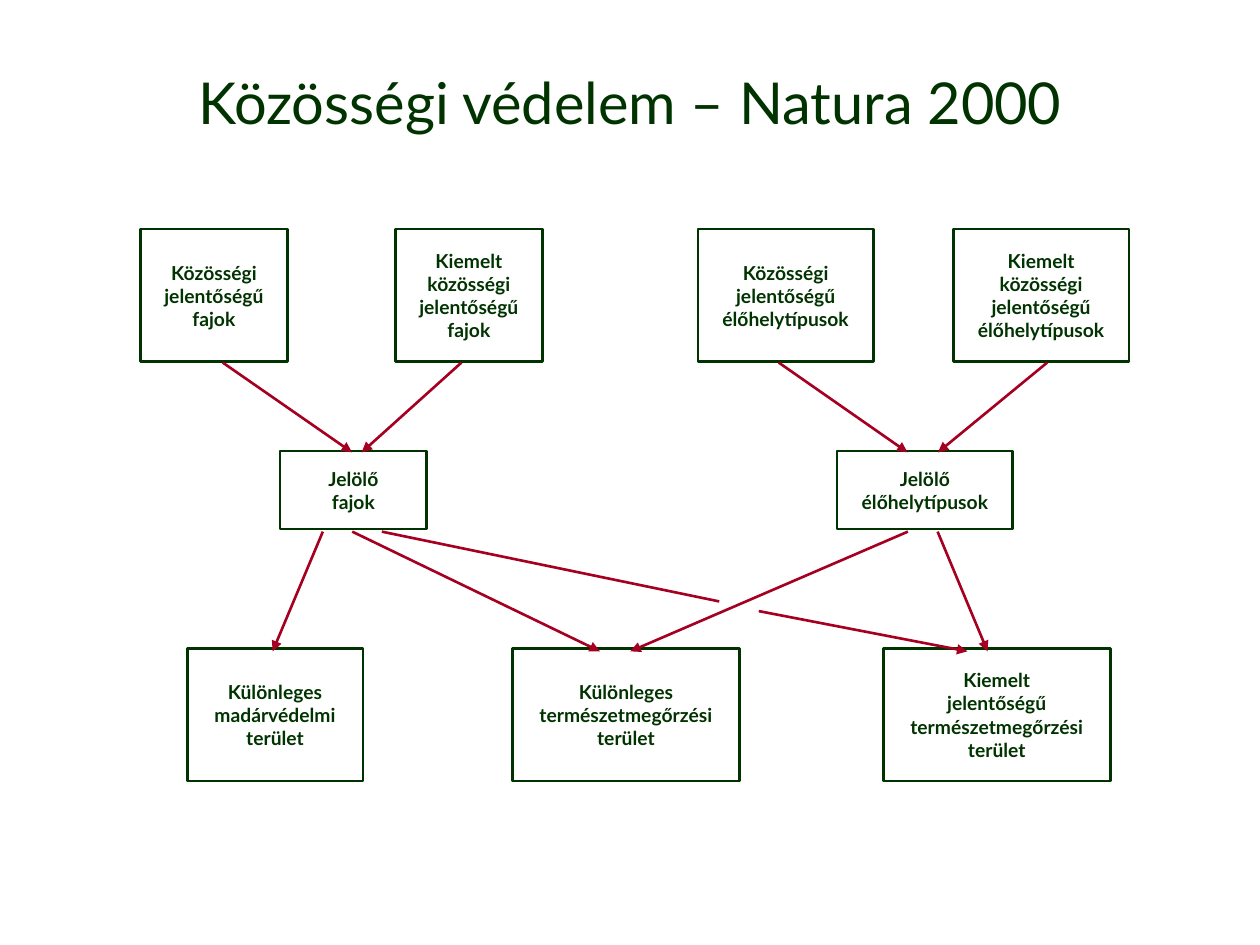
from lxml.etree import SubElement
from pptx import Presentation
from pptx.dml.color import RGBColor
from pptx.enum.shapes import MSO_CONNECTOR, MSO_SHAPE
from pptx.enum.text import MSO_ANCHOR, PP_ALIGN
from pptx.oxml.ns import qn
from pptx.util import Pt

GREEN, RED, WHITE = "003300", "A50021", "FFFFFF"


def color(value):
    return RGBColor.from_string(value)


class Diagram:
    font = "Lato"
    line_width = 1.5

    def __init__(self, slide):
        self.s = slide

    def add_text(self, sp, lines, **fmt):
        tf = sp.text_frame
        tf.word_wrap = True
        tf.vertical_anchor = MSO_ANCHOR.MIDDLE
        for i, line in enumerate(lines):
            p = tf.paragraphs[0] if i == 0 else tf.add_paragraph()
            p.alignment = PP_ALIGN.CENTER
            r = p.add_run()
            r.text = line
            for name, value in {"name": self.font, **fmt}.items():
                setattr(r.font, name, value)
            r.font.color.rgb = color(GREEN)

    def title(self, text, x, y, w, h):
        sp = self.s.shapes.add_textbox(Pt(x), Pt(y), Pt(w), Pt(h))
        self.add_text(sp, [text], size=Pt(33))

    def box(self, center, y, w, h, lines):
        sp = self.s.shapes.add_shape(
            MSO_SHAPE.RECTANGLE, Pt(center - w / 2), Pt(y), Pt(w), Pt(h))
        sp.shadow.inherit = False
        sp.fill.solid()
        sp.fill.fore_color.rgb = color(WHITE)
        sp.line.color.rgb = color(GREEN)
        sp.line.width = Pt(self.line_width)
        self.add_text(sp, lines, size=Pt(11), bold=True)

    def line(self, x1, y1, x2, y2, arrow=True):
        c = self.s.shapes.add_connector(
            MSO_CONNECTOR.STRAIGHT, Pt(x1), Pt(y1), Pt(x2), Pt(y2))
        c.line.color.rgb = color(RED)
        c.line.width = Pt(self.line_width)
        props = c.element.spPr
        if arrow:
            SubElement(props.find(qn("a:ln")), qn("a:tailEnd"), type="triangle")
        SubElement(props, qn("a:effectLst"))


def main():
    prs = Presentation()
    prs.slide_width, prs.slide_height = Pt(720), Pt(540)
    d = Diagram(prs.slides.add_slide(prs.slide_layouts[6]))

    d.title("Közösségi védelem – Natura 2000", 36, 21.6, 648, 72.7)

    # Rows of boxes: top, height, then center, width and lines of each box
    narrow, medium, wide = 83.8, 100.4, 129.8
    rows = [
        (131, 75.8, [
            (122.3, narrow, ["Közösségi jelentőségű", "fajok"]),
            (268, narrow, ["Kiemelt", "közösségi jelentőségű", "fajok"]),
            (449, medium, ["Közösségi jelentőségű", "élőhelytípusok"]),
            (595, medium, ["Kiemelt", "közösségi jelentőségű", "élőhelytípusok"]),
        ]),
        (257.8, 44.6, [
            (202, narrow, ["Jelölő", "fajok"]),
            (528.6, medium, ["Jelölő", "élőhelytípusok"]),
        ]),
        (370.6, 75.8, [
            (157.2, medium, ["Különleges madárvédelmi terület"]),
            (357.7, wide, ["Különleges természetmegőrzési", "terület"]),
            (569.6, wide, ["Kiemelt", "jelentőségű természetmegőrzési terület"]),
        ]),
    ]
    for y, h, boxes in rows:
        for center, w, lines in boxes:
            d.box(center, y, w, h, lines)

    # Arrows between rows: start and end heights, then x pairs
    links = [
        (207.2, 258.5, [(127.3, 201.2), (263.7, 206.7), (445, 518.6), (598.4, 536)]),
        (303.8, 372.2, [(184.5, 155.8), (201.3, 342.8), (518.8, 360.2), (535.8, 564.3)]),
    ]
    for y1, y2, pairs in links:
        for x1, x2 in pairs:
            d.line(x1, y1, x2, y2)

    # Long link, interrupted where it crosses another arrow
    d.line(218.2, 303.8, 411, 343.7, arrow=False)
    d.line(433.6, 349.2, 552.8, 372.2)

    prs.save("out.pptx")


if __name__ == "__main__":
    main()
